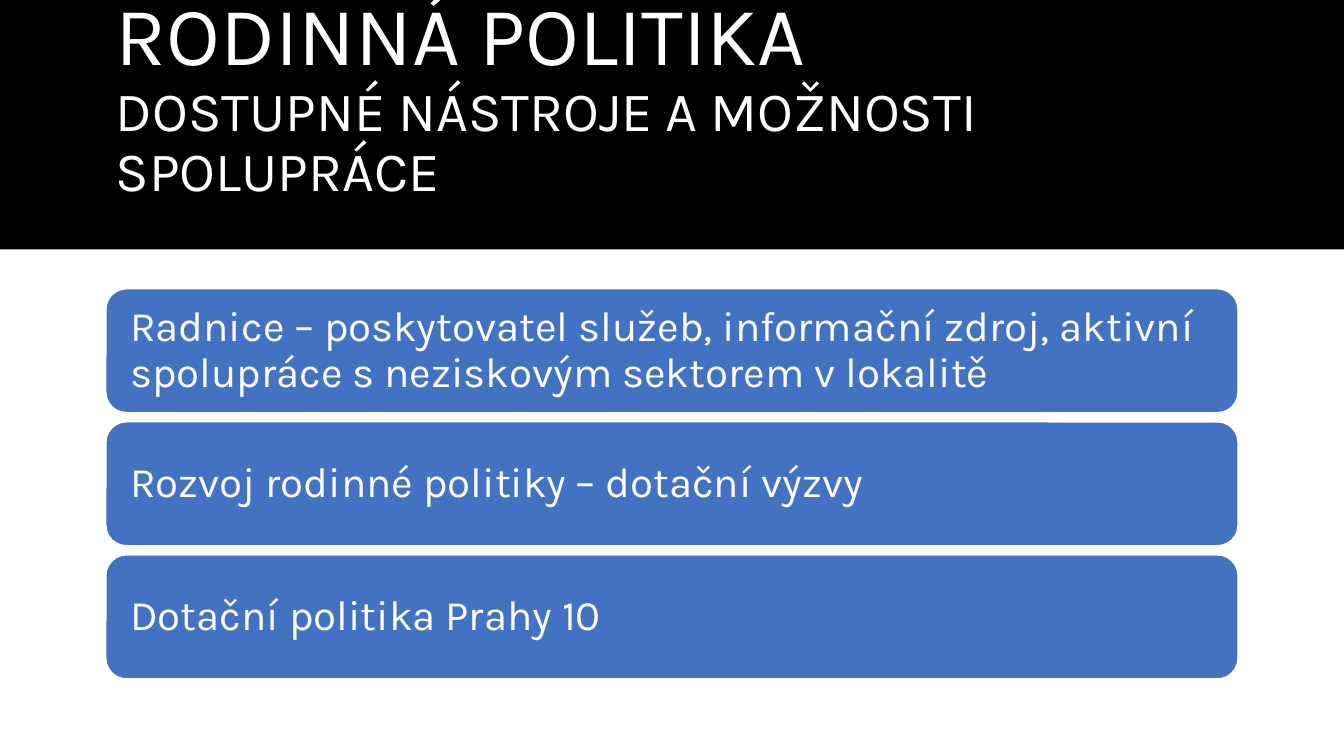
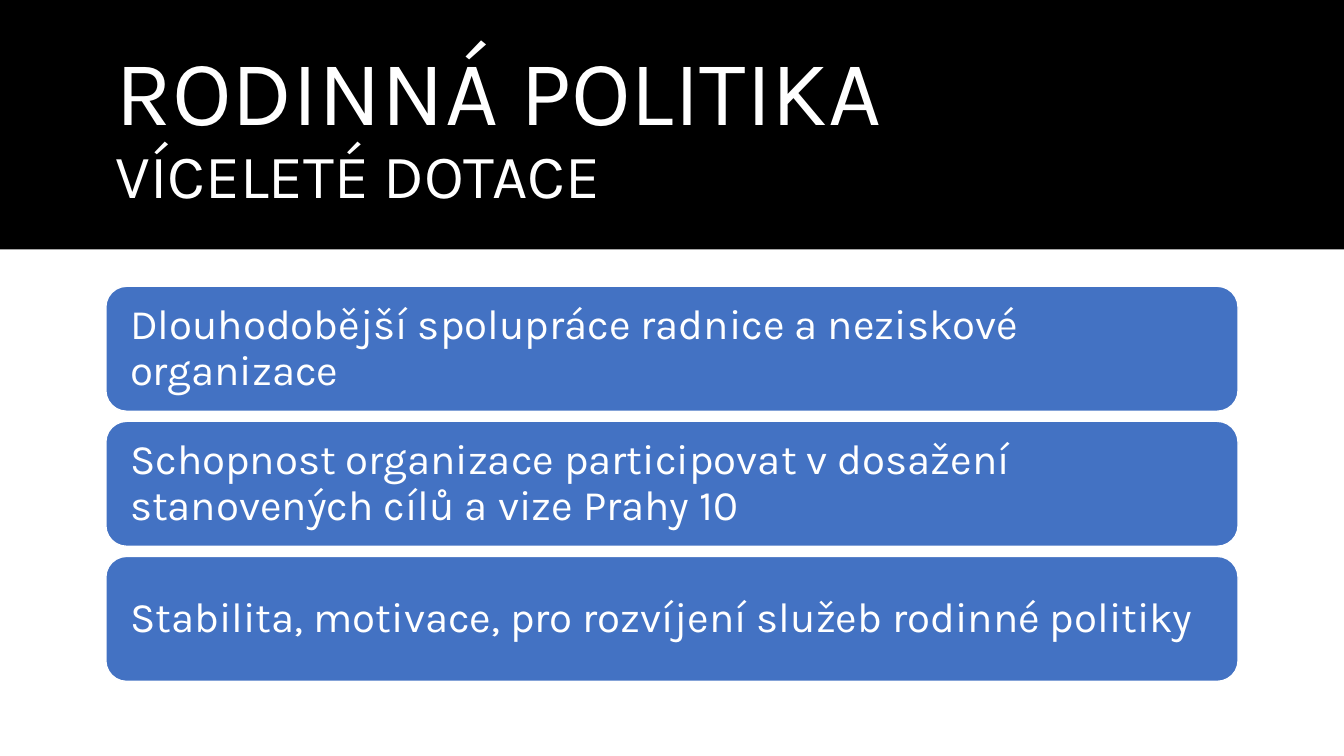
"""Build two slides on family policy: a title band above a stack of rounded bars."""
from dataclasses import dataclass

from pptx import Presentation
from pptx.dml.color import RGBColor
from pptx.enum.shapes import MSO_SHAPE
from pptx.enum.text import MSO_ANCHOR, PP_ALIGN
from pptx.util import Inches, Pt

SLIDE_W, SLIDE_H = 13.33, 7.5
BAND_H = 0.33 * SLIDE_H
MARGIN = 1.05
CONTENT_W = SLIDE_W - 2 * MARGIN
HEADING_TOP, HEADING_H = 0.35, 1.86
STACK_MIDDLE = 0.64 * SLIDE_H
FONT = "Karla"
BLACK, WHITE, BLUE = "000000", "FFFFFF", "4372C3"
POINT_SIZE = 30


@dataclass(frozen=True)
class Line:
    """One line of text with its size in points."""
    text: str
    size: float


@dataclass(frozen=True)
class Insets:
    """Text margins of a shape in inches."""
    left: float
    top: float
    right: float
    bottom: float


@dataclass(frozen=True)
class Topic:
    """Content of one slide and the rhythm of its bars."""
    heading: Line
    subheading: Line
    points: tuple[str, ...]
    bar_h: float
    gap: float
    heading_lift: float = 0


TOPICS = (
    Topic(
        Line("RODINNÁ POLITIKA", 59.4),
        Line("DOSTUPNÉ NÁSTROJE A MOŽNOSTI SPOLUPRÁCE", 39.6),
        (
            "Radnice – poskytovatel služeb, informační zdroj, aktivní "
            "spolupráce s neziskovým sektorem v lokalitě",
            "Rozvoj rodinné politiky – dotační výzvy",
            "Dotační politika Prahy 10",
        ),
        bar_h=1.23, gap=0.09, heading_lift=0.6,
    ),
    Topic(
        Line("RODINNÁ POLITIKA", 66),
        Line("VÍCELETÉ DOTACE", 44),
        (
            "Dlouhodobější spolupráce radnice a neziskové organizace",
            "Schopnost organizace participovat v dosažení stanovených cílů a vize Prahy 10",
            "Stabilita, motivace, pro rozvíjení služeb rodinné politiky",
        ),
        bar_h=1.24, gap=0.1,
    ),
)


def color(hex_code: str) -> RGBColor:
    """Turn a hex string into a colour."""
    return RGBColor.from_string(hex_code)


def write(frame, lines: tuple[Line, ...], insets: Insets) -> None:
    """Fill a text frame with left-aligned white lines, centred vertically."""
    frame.word_wrap = True
    frame.vertical_anchor = MSO_ANCHOR.MIDDLE
    frame.margin_left, frame.margin_top = Inches(insets.left), Inches(insets.top)
    frame.margin_right, frame.margin_bottom = Inches(insets.right), Inches(insets.bottom)
    frame.text = "\n".join(line.text for line in lines)
    for paragraph, line in zip(frame.paragraphs, lines):
        paragraph.alignment = PP_ALIGN.LEFT
        paragraph.line_spacing = 0.9
        for run in paragraph.runs:
            run.font.name = FONT
            run.font.size = Pt(line.size)
            run.font.color.rgb = color(WHITE)


def add_band(slide) -> None:
    """Draw the black band across the top."""
    band = slide.shapes.add_shape(
        MSO_SHAPE.RECTANGLE, 0, 0, Inches(SLIDE_W), Inches(BAND_H))
    band.shadow.inherit = False
    band.fill.solid()
    band.fill.fore_color.rgb = color(BLACK)
    band.line.fill.background()


def add_heading(slide, topic: Topic) -> None:
    """Write the heading and subheading on the band."""
    heading = slide.shapes.add_textbox(
        Inches(MARGIN), Inches(HEADING_TOP), Inches(CONTENT_W), Inches(HEADING_H))
    write(heading.text_frame, (topic.heading, topic.subheading),
          Insets(0.1, 0.05, 0.1, 0.05 + topic.heading_lift))


def add_bar(slide, point: str, top: float, height: float) -> None:
    """Draw one rounded bar holding a point."""
    bar = slide.shapes.add_shape(
        MSO_SHAPE.ROUNDED_RECTANGLE,
        Inches(MARGIN), Inches(top), Inches(CONTENT_W), Inches(height))
    bar.shadow.inherit = False
    bar.fill.solid()
    bar.fill.fore_color.rgb = color(BLUE)
    bar.line.color.rgb = color(WHITE)
    bar.line.width = Pt(1)
    write(bar.text_frame, (Line(point, POINT_SIZE),), Insets(0.18, 0.18, 0.18, 0.18))


def add_topic(deck, topic: Topic) -> None:
    """Add a slide with its band, heading and evenly stacked bars."""
    slide = deck.slides.add_slide(deck.slide_layouts[6])
    add_band(slide)
    add_heading(slide, topic)
    pitch = topic.bar_h + topic.gap
    stack_top = STACK_MIDDLE - (len(topic.points) * pitch - topic.gap) / 2
    for row, point in enumerate(topic.points):
        add_bar(slide, point, stack_top + row * pitch, topic.bar_h)


def main() -> None:
    """Build and save the deck."""
    deck = Presentation()
    deck.slide_width, deck.slide_height = Inches(SLIDE_W), Inches(SLIDE_H)
    for topic in TOPICS:
        add_topic(deck, topic)
    deck.save("out.pptx")


if __name__ == "__main__":
    main()
